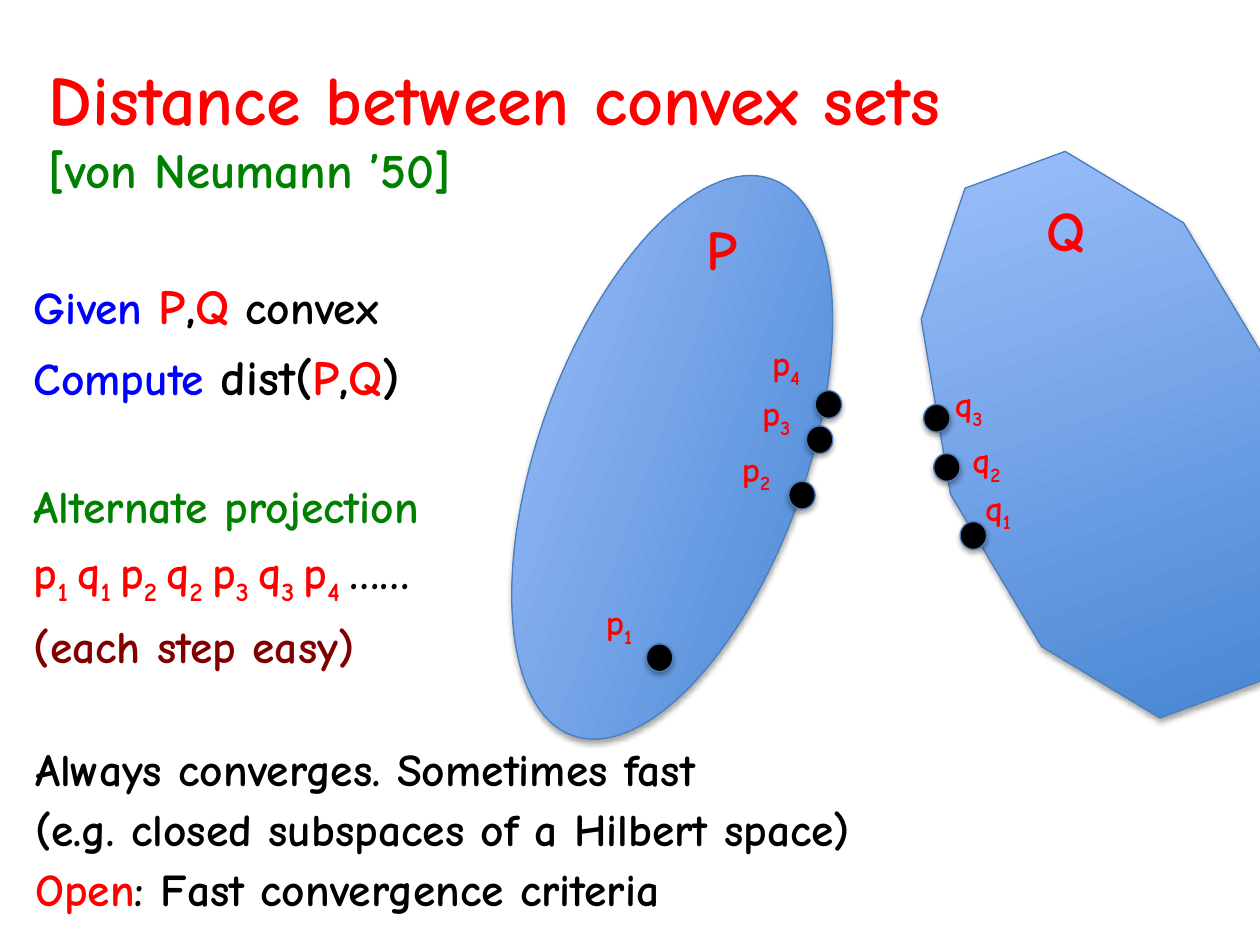
from lxml import etree
from pptx import Presentation
from pptx.dml.color import RGBColor
from pptx.enum import shapes, text
from pptx.oxml import ns
from pptx.util import Inches, Pt

RED = RGBColor(0xFF, 0, 0)
GREEN = RGBColor(0, 0x80, 0)
BLUE = RGBColor(0, 0, 0xFF)
MAROON = RGBColor(0x80, 0, 0)
BLACK = RGBColor(0, 0, 0)
DEEP = RGBColor(0x3F, 0x80, 0xCE)
PALE = RGBColor(0xA4, 0xC4, 0xFF)
EDGE = RGBColor(0x4B, 0x7E, 0xBC)
FONT = "Comic Neue"
FORM = shapes.MSO_SHAPE


def write(para, runs, size):
    for words, color, *extra in runs:
        run = para.add_run()
        run.text = words
        look = {"name": FONT, "bold": True, "size": Pt(size)}
        if extra and extra[0] == "sub":
            run.font._element.set("baseline", "-25000")
        elif extra:
            look["size"] = Pt(extra[0])
        for key, value in look.items():
            setattr(run.font, key, value)
        run.font.color.rgb = color


def block(slide, box, lines, size, wrap=False, **style):
    frame = slide.shapes.add_textbox(*map(Inches, box)).text_frame
    frame.word_wrap = wrap
    for index, (runs, gap) in enumerate(lines):
        para = frame.paragraphs[0] if index == 0 else frame.add_paragraph()
        para.space_before = Pt(gap)
        for key, value in style.items():
            setattr(para, key, value)
        write(para, runs, size)
    return frame


def solid(slide, form, box, turn=0, dark=False):
    shape = slide.shapes.add_shape(form, *map(Inches, box))
    shape.rotation = turn
    if dark:
        shape.fill.solid()
        shape.fill.fore_color.rgb = BLACK
    else:
        shape.fill.gradient()
        shape.fill.gradient_angle = 90
        for stop, color in zip(shape.fill.gradient_stops, (DEEP, PALE)):
            stop.color.rgb = color
    shape.line.color.rgb = EDGE
    shape.line.width = Pt(0.75)
    shape.shadow.inherit = False
    effect = shape._element.spPr.find(ns.qn("a:effectLst"))
    shade = etree.SubElement(effect, ns.qn("a:outerShdw"), blurRad=str(Pt(3.1)),
                             dist=str(Pt(1.8)), dir="5400000", rotWithShape="0")
    tint = etree.SubElement(shade, ns.qn("a:srgbClr"), val=str(BLACK))
    etree.SubElement(tint, ns.qn("a:alpha"), val="35000")


def title(slide, box):
    frame = block(slide, box, [([("Distance between convex sets", RED)], 0)], 40, True)
    frame.vertical_anchor = text.MSO_ANCHOR.MIDDLE
    para = frame.paragraphs[0]
    para.add_line_break()
    write(para, [("[von Neumann ’50]", GREEN)], 28)


def diagram(slide, left, top):
    solid(slide, FORM.OVAL, (left - 1.01, top + 1.57, 4.69, 2.12), 289.7)
    solid(slide, FORM.DECAGON, (left + 3.46, top + 0.21, 2.74, 4.48), 339.8)
    for name, x, y, wide in (("P", 1.51, 0.65, 0.44), ("Q", 4.21, 0.5, 0.6)):
        block(slide, (left + x, top + y, wide, 0.64), [([(name, RED)], 0)], 32)
    points = [
        ("p", "1", 1.13, 4.11, 0.71, 3.72),
        ("q", "1", 3.62, 3.14, 3.72, 2.81),
        ("p", "2", 2.26, 2.82, 1.79, 2.5),
        ("q", "2", 3.41, 2.6, 3.62, 2.43),
        ("p", "3", 2.4, 2.38, 1.95, 2.06),
        ("q", "3", 3.33, 2.21, 3.48, 1.99),
        ("p", "4", 2.47, 2.1, 2.03, 1.66),
    ]
    for name, step, x, y, tagx, tagy in points:
        solid(slide, FORM.OVAL, (left + x, top + y, 0.21, 0.22), dark=True)
        block(slide, (left + tagx, top + tagy, 0.47, 0.44),
              [([(name, RED), (step, RED, "sub")], 0)], 20)


def problem(slide, box):
    steps = []
    for name in ("p1", "q1", "p2", "q2", "p3", "q3", "p4"):
        steps += [(name[0], RED), (name[1] + " ", RED, "sub")]
    lines = [
        ([("Given ", BLUE), ("P", RED, 28), (",", BLACK, 28), ("Q", RED, 28),
          (" convex", BLACK)], 6.5),
        ([("Compute ", BLUE), ("dist(", BLACK, 28), ("P", RED, 28),
          (",", BLACK, 28), ("Q", RED, 28), (")", BLACK, 28)], 6.5),
        ([("Alternate projection", GREEN)], 42),
        (steps + [("……", BLACK)], 6.5),
        ([("(each step easy)", MAROON)], 6.5),
    ]
    block(slide, box, lines, 26, True)


def result(slide, box):
    lines = [
        ([("Always converges. Sometimes fast", BLACK)], 0),
        ([("(e.g. closed subspaces of a Hilbert space)", BLACK)], 0),
        ([("Open", RED), (": Fast convergence criteria", BLACK)], 0),
    ]
    block(slide, box, lines, 26, line_spacing=1.1)


def main():
    deck = Presentation()
    deck.slide_width, deck.slide_height = Inches(10), Inches(7.5)
    slide = deck.slides.add_slide(deck.slide_layouts[6])
    title(slide, (0.29, 0.2, 9.25, 1.62))
    diagram(slide, 4, 1)
    problem(slide, (0.17, 2.14, 9.71, 3.35))
    result(slide, (0.18, 5.79, 7.73, 1.87))
    deck.save("out.pptx")


if __name__ == "__main__":
    main()
